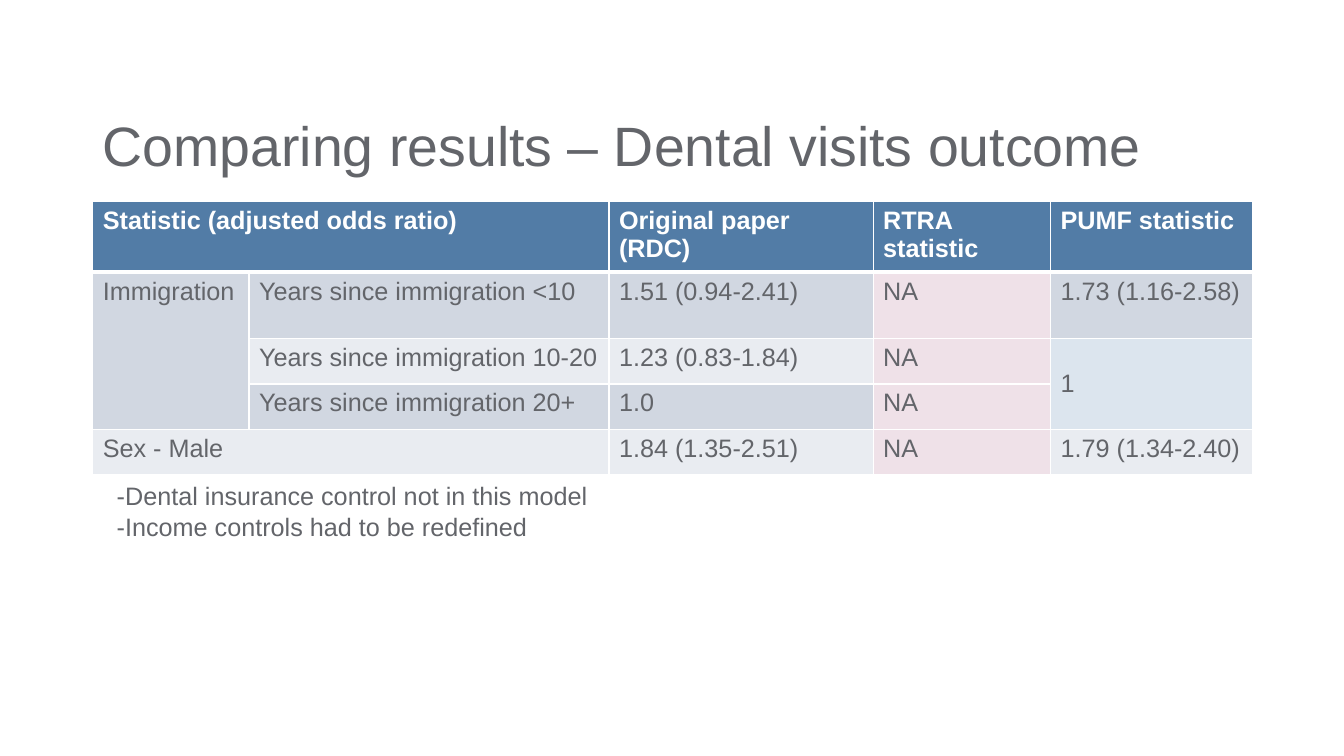
from lxml.etree import SubElement
from pptx import Presentation
from pptx.dml.color import RGBColor
from pptx.enum.text import MSO_ANCHOR
from pptx.oxml.ns import qn
from pptx.util import Inches, Pt

TITLE = "Comparing results – Dental visits outcome"
NOTES = ["-Dental insurance control not in this model",
         "-Income controls had to be redefined"]
ROWS = [
    ["Statistic (adjusted odds ratio)", "", "Original paper (RDC)", "RTRA statistic", "PUMF statistic"],
    ["Immigration", "Years since immigration <10", "1.51 (0.94-2.41)", "NA", "1.73 (1.16-2.58)"],
    ["", "Years since immigration 10-20", "1.23 (0.83-1.84)", "NA", "1"],
    ["", "Years since immigration 20+", "1.0", "NA", ""],
    ["Sex - Male", "", "1.84 (1.35-2.51)", "NA", "1.79 (1.34-2.40)"],
]
MERGES = [((0, 0), (0, 1)), ((1, 0), (3, 0)), ((2, 4), (3, 4)), ((4, 0), (4, 1))]
COL_W = [1.55, 3.57, 2.62, 1.76, 2]
ROW_H = [0.66, 0.66, 0.45, 0.45, 0.45]
LEFT, WIDTH = 0.92, 11.5
GREY, WHITE, HEADER, NA_FILL, REF_FILL = "63656A", "FFFFFF", "527CA6", "EFE1E8", "DCE5EE"
BANDS = ["E9ECF1", "D1D7E1"]
NA_COL, REF_CELLS = 3, [(2, 4), (3, 4)]


def rgb(value):
    """Turn a hex string into a colour."""
    return RGBColor.from_string(value)


def style(tf, size, color=GREY, bold=False):
    """Format every run of a text frame."""
    for p in tf.paragraphs:
        for r in p.runs:
            r.font.name, r.font.size, r.font.bold = "Arial", Pt(size), bold
            r.font.color.rgb = rgb(color)


def add_text(s, box, lines, size):
    """Add a wrapped text box with one paragraph per line."""
    tf = s.shapes.add_textbox(*map(Inches, box)).text_frame
    tf.word_wrap = True
    tf.text = "\n".join(lines)
    style(tf, size)
    return tf


def add_borders(cell, row):
    """Draw white cell borders, heavier below the header."""
    heavy = {0: "lnB", 1: "lnT"}.get(row)
    for side in ("lnL", "lnR", "lnT", "lnB"):
        width = Pt(3 if side == heavy else 1)
        ln = SubElement(cell._tc.get_or_add_tcPr(), qn(f"a:{side}"), w=str(width))
        SubElement(SubElement(ln, qn("a:solidFill")), qn("a:srgbClr"), val=WHITE)


def cell_fill(row, col):
    """Choose the fill of a cell from its place in the table."""
    if row == 0:
        return HEADER
    if col == NA_COL:
        return NA_FILL
    return REF_FILL if (row, col) in REF_CELLS else BANDS[row % 2]


def add_results(s):
    """Add the table of odds ratios."""
    box = map(Inches, (LEFT, 2, WIDTH, sum(ROW_H)))
    table = s.shapes.add_table(len(ROW_H), len(COL_W), *box).table
    for column, width in zip(table.columns, COL_W):
        column.width = Inches(width)
    for i, values in enumerate(ROWS):
        table.rows[i].height = Inches(ROW_H[i])
        for j, value in enumerate(values):
            cell = table.cell(i, j)
            cell.text = value
            style(cell.text_frame, 18, GREY if i else WHITE, i == 0)
            add_borders(cell, i)
            cell.fill.solid()
            cell.fill.fore_color.rgb = rgb(cell_fill(i, j))
            if (i, j) in REF_CELLS:
                cell.vertical_anchor = MSO_ANCHOR.MIDDLE
    for first, last in MERGES:
        table.cell(*first).merge(table.cell(*last))


def main():
    """Build the slide."""
    prs = Presentation()
    prs.slide_width, prs.slide_height = Inches(13.33), Inches(7.5)
    s = prs.slides.add_slide(prs.slide_layouts[6])
    tf = add_text(s, (LEFT, 1.09, WIDTH, 0.76), [TITLE], 39.6)
    tf.vertical_anchor = MSO_ANCHOR.MIDDLE
    tf.paragraphs[0].line_spacing = 0.9
    add_results(s)
    add_text(s, (1.06, 4.72, 7.6, 0.71), NOTES, 18)
    prs.save("out.pptx")


if __name__ == "__main__":
    main()
